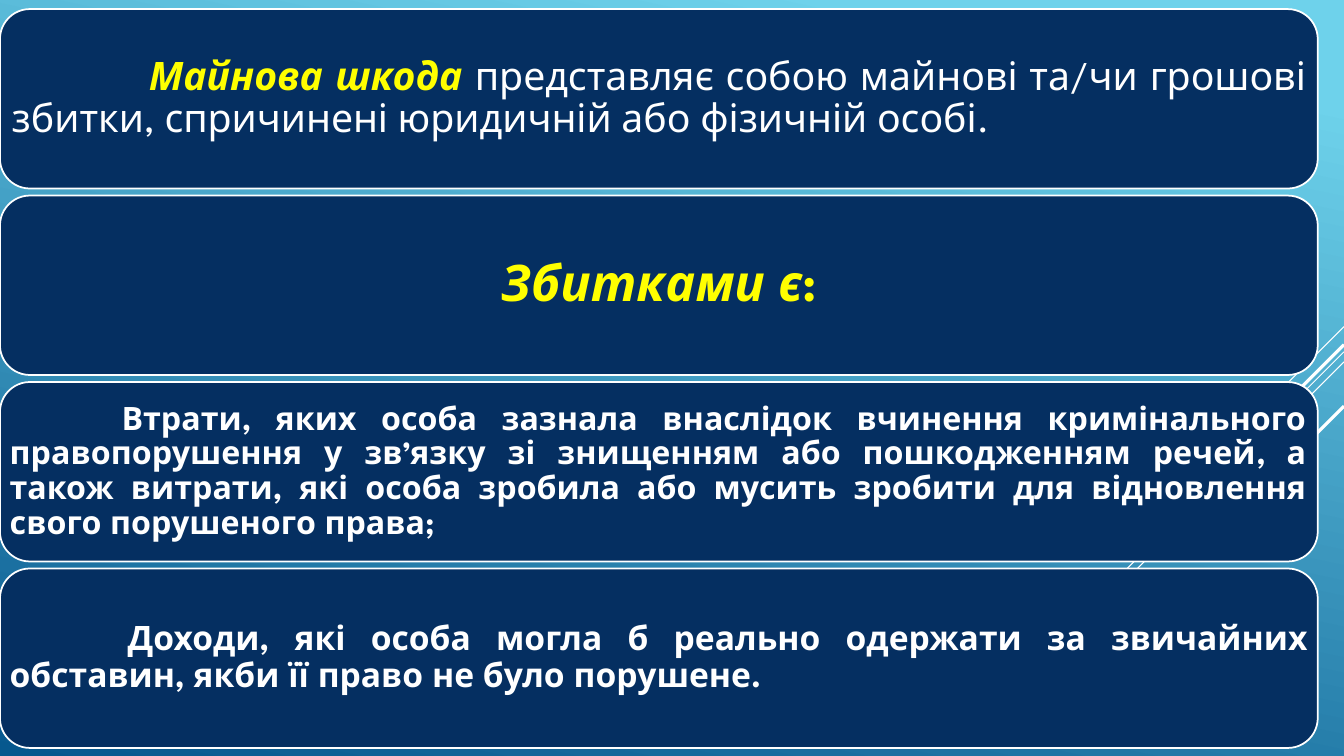
import pptx
import pptx.util
import pptx.dml.color
import pptx.enum.shapes
import pptx.enum.text
import pptx.oxml.ns
import lxml.etree

Inches, Pt = pptx.util.Inches, pptx.util.Pt
ALIGN = pptx.enum.text.PP_ALIGN
HUES = {"navy": "052F61", "white": "FFFFFF", "gold": "FFFF00",
        "sky": "6ED2EB", "deep": "06588E"}
FONT = "League Spartan"

CARDS = [
    {"size": 28, "inset": 0.12, "indent": 1.36, "align": ALIGN.JUSTIFY, "runs": [
        ("Майнова шкода ", "gold", True, True),
        ("представляє собою майнові та/чи грошові збитки, спричинені "
         "юридичній або фізичній особі.", "white", False, False)]},
    {"size": 36, "inset": 0.15, "indent": 0, "align": ALIGN.CENTER, "runs": [
        ("Збитками є", "gold", True, True), (":", "gold", True, False)]},
    {"size": 23, "inset": 0.1, "indent": 1.11, "align": ALIGN.JUSTIFY, "runs": [
        ("Втрати, яких особа зазнала внаслідок вчинення кримінального "
         "правопорушення у зв’язку зі знищенням або пошкодженням речей, "
         "а також витрати, які особа зробила або мусить зробити для "
         "відновлення свого порушеного права;", "white", True, False)]},
    {"size": 24, "inset": 0.1, "indent": 1.17, "align": ALIGN.JUSTIFY, "runs": [
        ("Доходи, які особа могла б реально одержати за звичайних "
         "обставин, якби її право не було порушене.", "white", True, False)]},
]
RAYS = [(3.24, 1, 0.75), (3.49, 3.26, 0.75), (3.59, 2.07, 0.75),
        (3.42, 1.91, 2.25), (4.03, 1.39, 2.25)]
WIDE, HIGH = 13.33, 7.5
TOP, STEP, CARD_W, CARD_H = 0.09, 1.85, 13.07, 1.78
CURVE = 0.09


def color(name):
    return pptx.dml.color.RGBColor.from_string(HUES[name])


def style(item, values):
    for key, value in values.items():
        setattr(item, key, value)


def add_ray(slide, top, span, width):
    ray = slide.shapes.add_connector(
        pptx.enum.shapes.MSO_CONNECTOR.STRAIGHT,
        Inches(WIDE), Inches(top), Inches(WIDE - span), Inches(top + span))
    ray.line.color.rgb = color("white")
    ray.line.width = Pt(width)
    lxml.etree.SubElement(ray._element.spPr, pptx.oxml.ns.qn("a:effectLst"))


def add_card(slide, top, card):
    box = slide.shapes.add_shape(
        pptx.enum.shapes.MSO_SHAPE.ROUNDED_RECTANGLE,
        Inches(0), Inches(top), Inches(CARD_W), Inches(CARD_H))
    box.shadow.inherit = False
    box.fill.solid()
    box.fill.fore_color.rgb = color("navy")
    box.line.color.rgb = color("white")
    box.line.width = Pt(1.25)
    frame = box.text_frame
    pad = Inches(card["inset"] - CURVE)
    style(frame, {"word_wrap": True, "margin_left": pad, "margin_right": pad,
                  "margin_top": pad, "margin_bottom": pad,
                  "vertical_anchor": pptx.enum.text.MSO_ANCHOR.MIDDLE})
    para = frame.paragraphs[0]
    style(para, {"alignment": card["align"], "line_spacing": 0.9})
    para._p.get_or_add_pPr().set("indent", str(Inches(card["indent"])))
    for text, hue, bold, slant in card["runs"]:
        run = para.add_run()
        run.text = text
        style(run.font, {"name": FONT, "size": Pt(card["size"]),
                         "bold": bold, "italic": slant})
        run.font.color.rgb = color(hue)


def main():
    deck = pptx.Presentation()
    style(deck, {"slide_width": Inches(WIDE), "slide_height": Inches(HIGH)})
    slide = deck.slides.add_slide(deck.slide_layouts[6])
    fill = slide.background.fill
    fill.gradient()
    fill.gradient_angle = 360 - 102
    for stop, hue, place in zip(fill.gradient_stops, ("sky", "deep"), (0.1, 1)):
        stop.color.rgb = color(hue)
        stop.position = place
    for ray in RAYS:
        add_ray(slide, *ray)
    for row, card in enumerate(CARDS):
        add_card(slide, TOP + row * STEP, card)
    deck.save("out.pptx")


if __name__ == "__main__":
    main()
